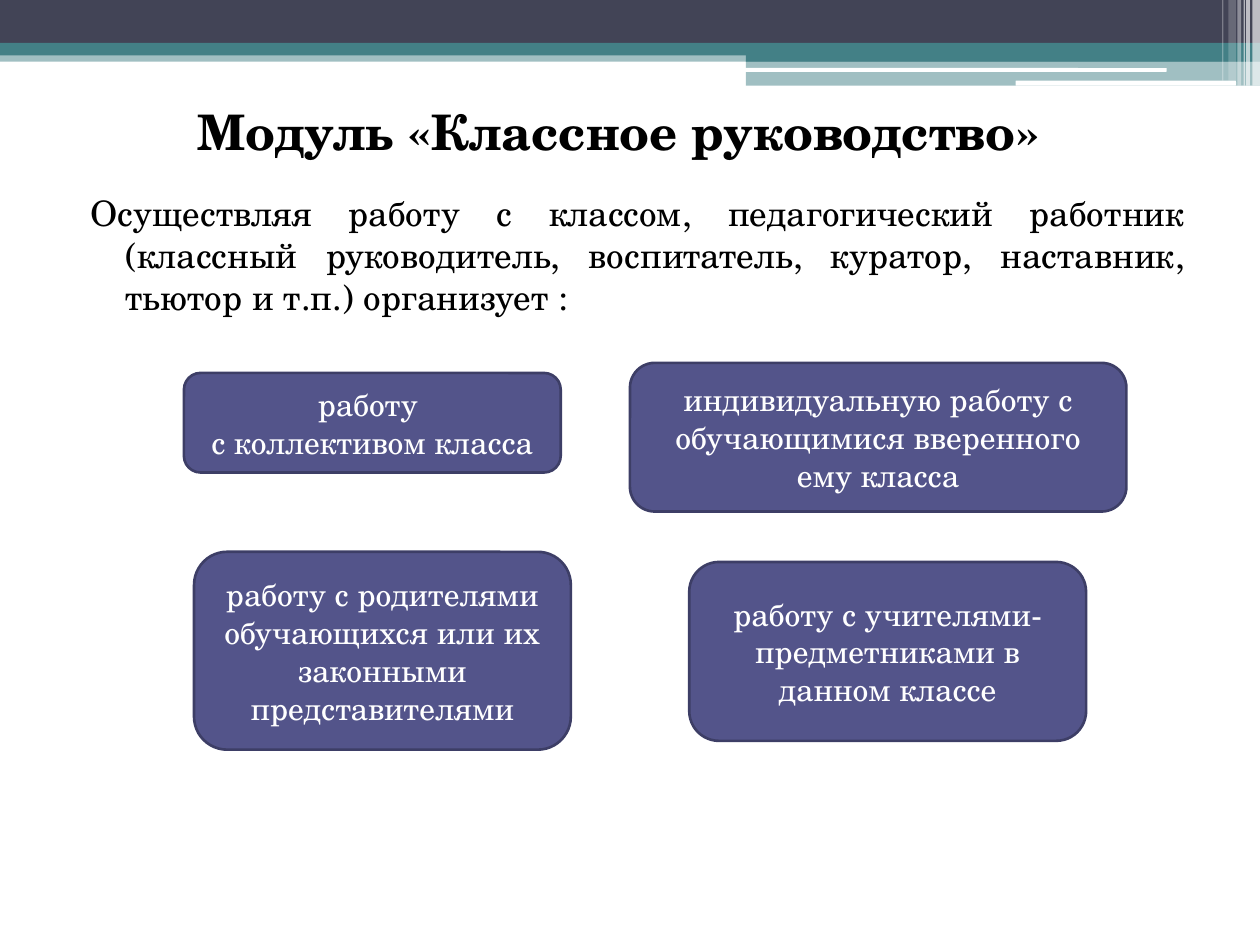
"""Build the slide about the class guidance module."""
import lxml.etree
import pptx
import pptx.dml.color
import pptx.enum.shapes
import pptx.enum.text
import pptx.oxml.ns
import pptx.util

Inches = pptx.util.Inches
Pt = pptx.util.Pt
Kind = pptx.enum.shapes.MSO_SHAPE
Align = pptx.enum.text.PP_ALIGN
Anchor = pptx.enum.text.MSO_ANCHOR


class Theme:
    """Colours, font and type sizes of the slide."""
    face = "TeX Gyre Schola"
    dark, teal, white, black = "424456", "438086", "FFFFFF", "000000"
    card, edge = "53548A", "3D3E66"
    title, body, label, line = Pt(28), Pt(20), Pt(18), Pt(1.5)


class Deck:
    """Hold the style and the current slide."""

    def __init__(self, theme):
        """Start a deck with one blank slide."""
        self.theme = theme
        self.show = pptx.Presentation()
        self.show.slide_width, self.show.slide_height = Inches(10), Inches(7.5)
        self.slide = self.show.slides.add_slide(self.show.slide_layouts[6])

    def tint(self, color, value):
        """Give a colour format its RGB value."""
        color.rgb = pptx.dml.color.RGBColor.from_string(value)

    def apply(self, item, values):
        """Set every attribute named in the dict."""
        for name, value in values.items():
            setattr(item, name, value)

    def shape(self, kind, box, fill, alpha=100):
        """Add a filled shape without an outline."""
        shape = self.slide.shapes.add_shape(kind, *map(Inches, box))
        shape.shadow.inherit = False
        shape.fill.solid()
        self.tint(shape.fill.fore_color, fill)
        shape.line.fill.background()
        if alpha < 100:
            tag = pptx.oxml.ns.qn("a:srgbClr")
            color = next(shape._element.spPr.iter(tag))
            node = lxml.etree.SubElement(color, pptx.oxml.ns.qn("a:alpha"))
            node.set("val", str(alpha * 1000))
        return shape

    def label(self, frame, text, color, align, font):
        """Put one styled paragraph in a text frame."""
        frame.word_wrap = True
        frame.text = text
        para = frame.paragraphs[0]
        para.alignment = align
        for run in para.runs:
            self.apply(run.font, {"name": self.theme.face, **font})
            self.tint(run.font.color, color)
        return para

    def text(self, box, text, align, font):
        """Add a text box with a hanging indent."""
        frame = self.slide.shapes.add_textbox(*map(Inches, box)).text_frame
        para = self.label(frame, text, self.theme.black, align, font)
        props = para._p.get_or_add_pPr()
        props.set("marL", str(Inches(0.4)))
        props.set("indent", str(Inches(-0.28)))

    def card(self, box, text):
        """Add a rounded card with a centred label."""
        theme = self.theme
        shape = self.shape(Kind.ROUNDED_RECTANGLE, box, theme.card)
        self.tint(shape.line.color, theme.edge)
        shape.line.width = theme.line
        frame = shape.text_frame
        frame.vertical_anchor = Anchor.MIDDLE
        self.label(frame, text, theme.white, Align.CENTER,
                   {"size": theme.label})


def main():
    """Draw the slide and save it."""
    theme = Theme()
    deck = Deck(theme)

    bands = [
        ((0, 0.4, 10, 0.09), theme.teal, 50),
        ((0, 0, 10, 0.34), theme.dark, 100),
        ((0, 0.34, 10, 0.1), theme.teal, 100),
        ((5.92, 0.39, 4.08, 0.1), theme.teal, 100),
        ((5.92, 0.48, 4.08, 0.2), theme.teal, 50),
    ]
    for box, fill, alpha in bands:
        deck.shape(Kind.RECTANGLE, box, fill, alpha)

    for box in [(5.91, 0.54, 3.35, 0.03), (8.06, 0.64, 1.75, 0.04)]:
        deck.shape(Kind.ROUNDED_RECTANGLE, box, theme.white)

    stripes = [
        (9.94, 0.06, 0.68, 65),
        (9.89, 0.03, 0.68, 65),
        (9.87, 0.01, 0.68, 60),
        (9.82, 0.03, 0.68, 40),
        (9.75, 0.06, 0.64, 20),
        (9.7, 0.01, 0.64, 30),
    ]
    for left, width, height, alpha in stripes:
        box = (left, 0, width, height)
        deck.shape(Kind.RECTANGLE, box, theme.white, alpha)

    deck.text((0.5, 1.47, 9, 5.72),
              "Осуществляя работу с классом, педагогический работник "
              "(классный руководитель, воспитатель, куратор, наставник, "
              "тьютор и т.п.) организует :",
              Align.JUSTIFY, {"size": theme.body})
    deck.text((0.35, 0.76, 9, 1.1), "Модуль «Классное руководство»",
              Align.CENTER, {"size": theme.title, "bold": True})

    cards = [
        ((1.46, 2.96, 2.99, 0.79), "работу \vс коллективом класса"),
        ((5, 2.88, 3.94, 1.18),
         "индивидуальную работу с обучающимися вверенного ему класса"),
        ((5.47, 4.46, 3.15, 1.42),
         "работу с учителями-предметниками в данном классе"),
        ((1.54, 4.38, 2.99, 1.57),
         "работу с родителями обучающихся или их законными "
         "представителями"),
    ]
    for box, text in cards:
        deck.card(box, text)

    deck.show.save("out.pptx")


if __name__ == "__main__":
    main()
